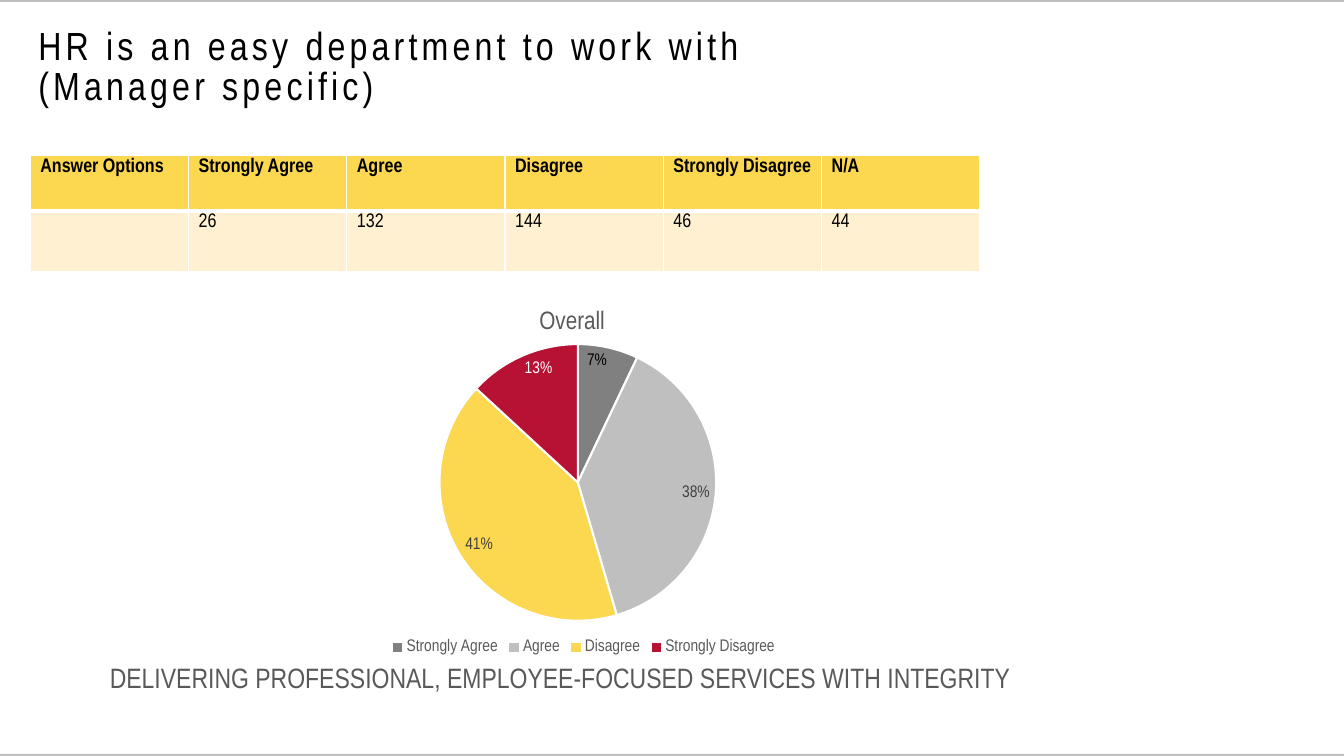
"""Build the survey slide on how easy HR is to work with."""
from lxml import etree
from pptx import Presentation
from pptx.chart.data import CategoryChartData
from pptx.dml.color import RGBColor
from pptx.enum.chart import XL_CHART_TYPE, XL_LABEL_POSITION, XL_LEGEND_POSITION
from pptx.enum.shapes import MSO_SHAPE
from pptx.enum.text import MSO_ANCHOR, PP_ALIGN
from pptx.oxml import parse_xml
from pptx.oxml.ns import nsdecls, qn
from pptx.util import Inches, Pt

PIE = XL_CHART_TYPE.PIE
INSIDE_END = XL_LABEL_POSITION.INSIDE_END
BOTTOM = XL_LEGEND_POSITION.BOTTOM
RECTANGLE = MSO_SHAPE.RECTANGLE
MIDDLE = MSO_ANCHOR.MIDDLE
LEFT = PP_ALIGN.LEFT

FONT = "Arial Narrow"
COLORS = {
    "black": "000000", "white": "FFFFFF", "bar": "BFBFBF", "text": "595959",
    "label": "404040", "header": "FCD750", "body": "FEF0D0",
    "Strongly Agree": "808080", "Agree": "BFBFBF",
    "Disagree": "FCD750", "Strongly Disagree": "B71234",
}


def style(font, size, color, bold=False):
    font.name = FONT
    font.size = Pt(size)
    font.bold = bold
    font.color.rgb = RGBColor.from_string(COLORS[color])


def manual_layout(**fractions):
    layout = parse_xml(f"<c:layout {nsdecls('c')}><c:manualLayout/></c:layout>")
    for name, value in fractions.items():
        etree.SubElement(layout[0], qn(f"c:{name}")).set("val", str(value))
    return layout


presentation = Presentation()
presentation.slide_width = Inches(13.33)
presentation.slide_height = Inches(7.5)
slide = presentation.slides.add_slide(presentation.slide_layouts[5])

for top in (0, 7.48):
    bar = slide.shapes.add_shape(RECTANGLE, 0, Inches(top), Inches(13.33), Inches(0.02))
    bar.shadow.inherit = False
    bar.fill.solid()
    bar.fill.fore_color.rgb = RGBColor.from_string(COLORS["bar"])
    bar.line.fill.background()

title = slide.shapes.title
title.left, title.top = Inches(0.28), Inches(0.15)
title.width, title.height = Inches(10.24), Inches(1.05)
title.text_frame.text = "HR is an easy department to work with\v(Manager specific)"
title.text_frame.vertical_anchor = MIDDLE
paragraph = title.text_frame.paragraphs[0]
paragraph.alignment = LEFT
paragraph.line_spacing = 0.85
style(paragraph.font, 28, "black")
for run in paragraph.runs:
    run._r.get_or_add_rPr().set("spc", "300")

chart_data = CategoryChartData()
chart_data.categories = ["Strongly Agree", "Agree", "Disagree", "Strongly Disagree"]
chart_data.add_series("Overall", (7, 38, 41, 13))
chart = slide.shapes.add_chart(
    PIE, Inches(2.32), Inches(2.98), Inches(6.94), Inches(3.56), chart_data).chart
style(chart.font, 12, "text")

chart.has_title = True
chart.chart_title.text_frame.text = "Overall"
style(chart.chart_title.text_frame.paragraphs[0].font, 18, "text")
title_element = chart.chart_title._element
for old_layout in title_element.findall(qn("c:layout")):
    title_element.remove(old_layout)
title_element.find(qn("c:tx")).addnext(
    manual_layout(xMode="edge", yMode="edge", x=0.43, y=0.01))

chart.has_legend = True
chart.legend.position = BOTTOM
chart.legend.include_in_layout = False
style(chart.legend.font, 12, "text")

plot = chart.plots[0]
plot.vary_by_categories = True
plot_area = plot._element.getparent()
for old_layout in plot_area.findall(qn("c:layout")):
    plot_area.remove(old_layout)
plot_area.insert(0, manual_layout(
    layoutTarget="inner", xMode="edge", yMode="edge", x=0.126, y=0.122, w=0.731, h=0.771))

series = plot.series[0]
labels = series.data_labels
labels.show_percentage = True
labels.show_value = False
labels.position = INSIDE_END
style(labels.font, 12, "label")
for index, category in enumerate(plot.categories):
    point = series.points[index]
    point.format.fill.solid()
    point.format.fill.fore_color.rgb = RGBColor.from_string(COLORS[category])
    point.format.line.color.rgb = RGBColor.from_string(COLORS["white"])
    point.format.line.width = Pt(1.5)
for index, color in ((0, "black"), (3, "white")):
    label = series.points[index].data_label
    style(label.font, 12, color)
    label.position = INSIDE_END
for label_element in series._element.iter(qn("c:dLbl")):
    label_element.find(qn("c:showVal")).set("val", "0")
    label_element.find(qn("c:showPercent")).set("val", "1")

rows = [
    ("Answer Options", "Strongly Agree", "Agree", "Disagree", "Strongly Disagree", "N/A"),
    ("", "26", "132", "144", "46", "44"),
]
table = slide.shapes.add_table(
    2, 6, Inches(0.3), Inches(1.54), Inches(9.4), Inches(1.15)).table
for column in table.columns:
    column.width = Inches(1.57)
for row_index, (values, height) in enumerate(zip(rows, (0.55, 0.6))):
    table.rows[row_index].height = Inches(height)
    is_header = row_index == 0
    for column_index, value in enumerate(values):
        cell = table.cell(row_index, column_index)
        for side in "LRTB":
            thick = (is_header and side == "B") or (not is_header and side == "T")
            cell._tc.get_or_add_tcPr().append(parse_xml(
                f'<a:ln{side} {nsdecls("a")} w="{Pt(3 if thick else 1)}"><a:solidFill>'
                f'<a:srgbClr val="{COLORS["white"]}"/></a:solidFill></a:ln{side}>'))
        cell.fill.solid()
        cell.fill.fore_color.rgb = RGBColor.from_string(
            COLORS["header" if is_header else "body"])
        cell.text = value
        paragraph = cell.text_frame.paragraphs[0]
        paragraph.line_spacing = 0.8
        style(paragraph.font, 14, "black", is_header)

motto = slide.shapes.add_textbox(Inches(0.99), Inches(6.54), Inches(9.59), Inches(0.73))
motto.text_frame.word_wrap = True
motto.text_frame.text = "DELIVERING PROFESSIONAL, EMPLOYEE-FOCUSED SERVICES WITH INTEGRITY"
paragraph = motto.text_frame.paragraphs[0]
paragraph.line_spacing = 0.9
style(paragraph.font, 20, "text")

presentation.save("out.pptx")
